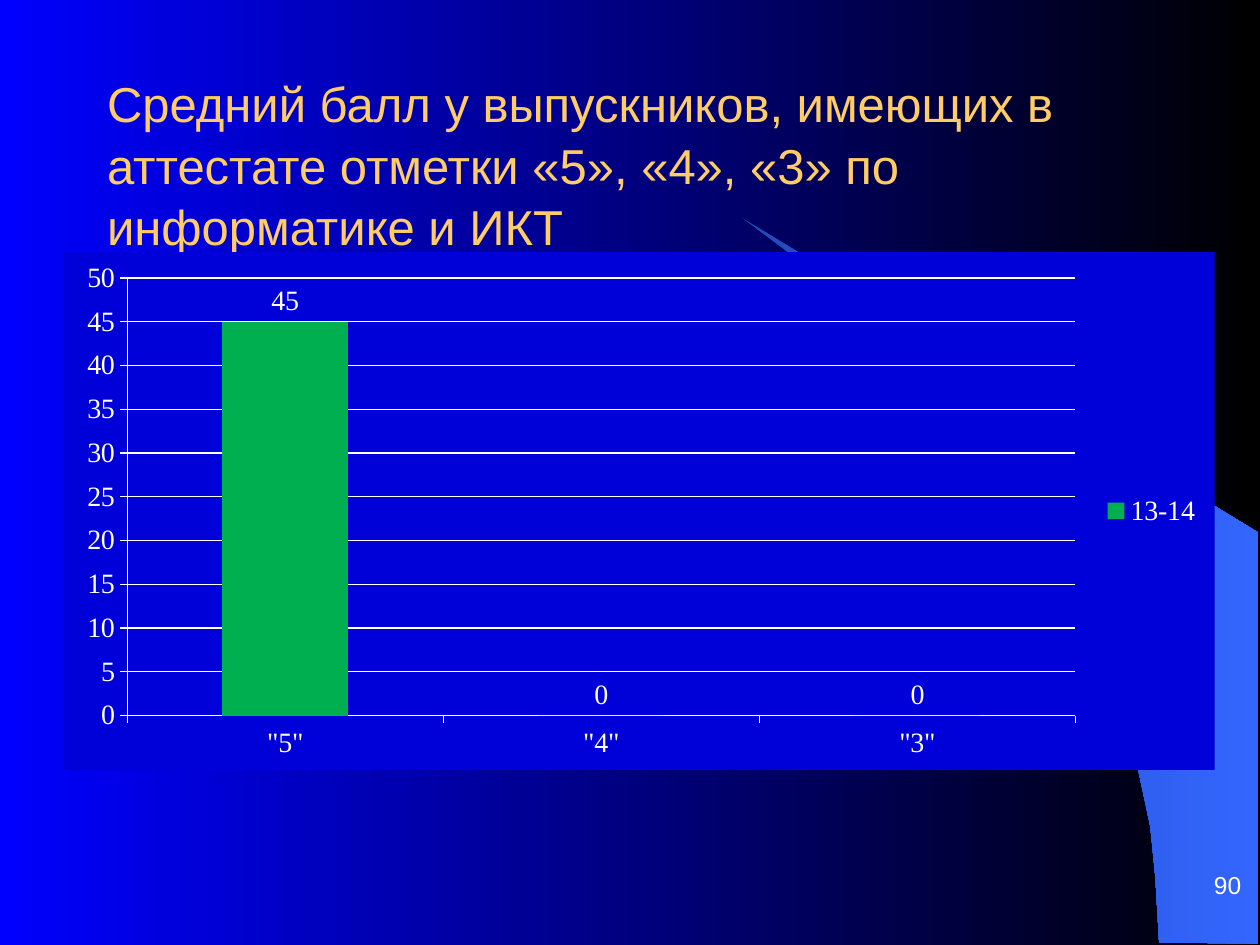
from pptx import Presentation
from pptx import util as u
from pptx.chart.data import CategoryChartData
from pptx.dml.color import RGBColor
from pptx.enum import chart as ch, text
from pptx.oxml import parse_xml
from pptx.oxml.ns import nsdecls, qn

COLORS = {"blue": "0000FF", "black": "000000", "arc_dark": "2449B6",
          "arc_light": "3366FF", "gold": "FFCC66", "white": "FFFFFF",
          "panel": "0000D9", "green": "00B050"}

ARC = [(9.2, 7.48), (9.99, 7.49), (9.99, 4.23), (5.89, 1.73), (6.24, 1.99),
       (6.53, 2.22), (6.85, 2.5), (7.16, 2.8), (7.62, 3.3), (8.03, 3.84),
       (8.32, 4.31), (8.58, 4.79), (8.78, 5.28), (8.93, 5.72), (9.03, 6.09),
       (9.13, 6.56), (9.17, 6.96)]


def rgb(name):
    return RGBColor.from_string(COLORS[name])


def set_all(obj, values):
    for name, value in values.items():
        setattr(obj, name, value)


class SlideBuilder:
    def __init__(self, slide):
        self.s = slide

    def gradient(self, fill, *names):
        """Fill from left to right with two named colours."""
        fill.gradient()
        fill.gradient_angle = 0
        for stop, name in zip(fill.gradient_stops, names):
            stop.color.rgb = rgb(name)

    def font(self, font, name, size, color):
        set_all(font, {"name": name, "size": u.Pt(size)})
        font.color.rgb = rgb(color)

    def place(self, sp, *box):
        names = ("left", "top", "width", "height")
        set_all(sp, dict(zip(names, map(u.Inches, box))))

    def add_text(self, sp, content, frame, para, size, color):
        tf = sp.text_frame
        set_all(tf, {"auto_size": text.MSO_AUTO_SIZE.NONE, **frame})
        p = tf.paragraphs[0]
        set_all(p, para)
        r = p.add_run()
        r.text = content
        self.font(r.font, "Arial", size, color)

    def title(self, content, box):
        sp = self.s.shapes.title
        self.place(sp, *box)
        self.add_text(sp, content,
                      {"vertical_anchor": text.MSO_ANCHOR.MIDDLE, "word_wrap": True},
                      {"alignment": text.PP_ALIGN.LEFT, "line_spacing": 1.05},
                      28, "gold")

    def page_number(self, content, box):
        sp = self.s.shapes.add_textbox(*map(u.Inches, box))
        self.add_text(sp, content,
                      {"vertical_anchor": text.MSO_ANCHOR.BOTTOM, "word_wrap": True,
                       "margin_top": 0, "margin_bottom": 0},
                      {"alignment": text.PP_ALIGN.RIGHT}, 14, "white")

    def outline(self, points, *names):
        points = [(u.Inches(x), u.Inches(y)) for x, y in points]
        builder = self.s.shapes.build_freeform(*points[0])
        builder.add_line_segments(points[1:], close=True)
        sp = builder.convert_to_shape()
        sp.shadow.inherit = False
        self.gradient(sp.fill, *names)
        sp.line.fill.background()

    def chart_panel(self, chart, color):
        """Fill the whole chart area."""
        panel = parse_xml(
            f'<c:spPr {nsdecls("c", "a")}><a:solidFill><a:srgbClr val="{COLORS[color]}"/>'
            '</a:solidFill><a:ln><a:noFill/></a:ln></c:spPr>')
        chart.element.find(qn("c:chart")).addnext(panel)

    def column_chart(self, box, cats, name, vals):
        data = CategoryChartData()
        data.categories = cats
        data.add_series(name, vals)
        chart = self.s.shapes.add_chart(
            ch.XL_CHART_TYPE.COLUMN_CLUSTERED, *map(u.Inches, box), data).chart
        set_all(chart, {"has_title": False, "has_legend": True})
        self.font(chart.font, "Times New Roman", 16, "white")
        set_all(chart.legend, {"position": ch.XL_LEGEND_POSITION.RIGHT,
                               "include_in_layout": False})
        self.chart_panel(chart, "panel")

        value_axis = chart.value_axis
        set_all(value_axis, {"minimum_scale": 0, "maximum_scale": 50,
                             "major_unit": 5, "has_major_gridlines": True})
        for axis in (chart.category_axis, value_axis):
            axis.major_tick_mark = ch.XL_TICK_MARK.OUTSIDE
        for line in (chart.category_axis.format.line, value_axis.format.line,
                     value_axis.major_gridlines.format.line):
            line.color.rgb = rgb("white")
            line.width = u.Pt(0.75)

        plot = chart.plots[0]
        set_all(plot, {"gap_width": 150, "vary_by_categories": False,
                       "has_data_labels": True})
        set_all(plot.data_labels, {"show_value": True,
                                   "position": ch.XL_LABEL_POSITION.OUTSIDE_END})
        fill = plot.series[0].format.fill
        fill.solid()
        fill.fore_color.rgb = rgb("green")


def main():
    prs = Presentation()
    set_all(prs, {"slide_width": u.Inches(10), "slide_height": u.Inches(7.5)})
    slide = SlideBuilder(prs.slides.add_slide(prs.slide_layouts[5]))
    slide.gradient(slide.s.background.fill, "blue", "black")
    slide.outline(ARC, "arc_dark", "arc_light")
    slide.page_number("90", (7.87, 6.72, 2.08, 0.42))
    slide.title("Средний балл у выпускников, имеющих в аттестате отметки "
                "«5», «4», «3» по информатике и ИКТ", (0.75, 0.67, 8.84, 1.25))
    slide.column_chart((0.51, 2, 9.13, 4.11), ('"5"', '"4"', '"3"'),
                       "13-14", (45, 0, 0))
    prs.save("out.pptx")


if __name__ == "__main__":
    main()
